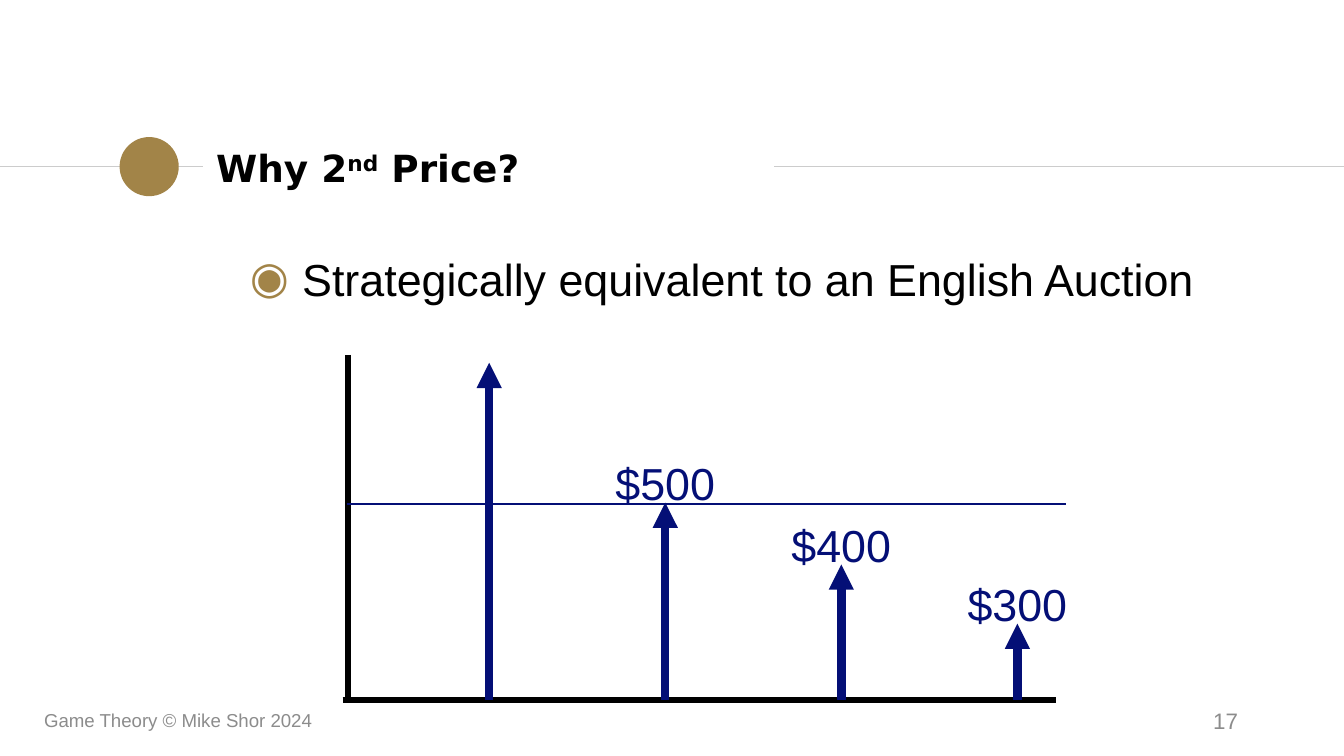
import pptx
import pptx.dml.color
import pptx.enum.shapes
import pptx.enum.text
import pptx.oxml
import pptx.oxml.ns
import pptx.util
from pptx.util import Inches

ALIGN = pptx.enum.text.PP_ALIGN
ANCHOR = pptx.enum.text.MSO_ANCHOR

BLACK = "000000"
NAVY = "040F76"
GOLD = "A28448"
RULE_GRAY = "CCCCCC"
FOOTER_GRAY = "8C8C8C"

BASELINE = 5.21
FIRST_BIDDER_X = 3.64
BIDDER_STEP = 1.31
# Height of each bidder's arrow tip and the value shown above it
BIDDERS = [(2.7, None), (3.74, "$500"), (4.2, "$400"), (4.64, "$300")]


def color(hex_string):
    return pptx.dml.color.RGBColor.from_string(hex_string)


def append_xml(parent, tag, **attributes):
    child = pptx.oxml.parse_xml(f"<a:{tag} {pptx.oxml.ns.nsdecls('a')}/>")
    for key, value in attributes.items():
        child.set(key, value)
    parent.append(child)
    return child


def add_line(slide, start, end, line_color, weight, arrow=False):
    line = slide.shapes.add_connector(
        pptx.enum.shapes.MSO_CONNECTOR.STRAIGHT,
        *(Inches(value) for value in (*start, *end)))
    line.line.color.rgb = color(line_color)
    line.line.width = pptx.util.Pt(weight)
    if arrow:
        append_xml(line.line._get_or_add_ln(), "tailEnd", type="triangle")
    append_xml(line._element.spPr, "effectLst")


def add_dot(slide, left, top, size, fill):
    dot = slide.shapes.add_shape(
        pptx.enum.shapes.MSO_SHAPE.OVAL,
        Inches(left), Inches(top), Inches(size), Inches(size))
    dot.shadow.inherit = False
    dot.fill.solid()
    dot.fill.fore_color.rgb = color(fill)
    dot.line.fill.background()


def add_text_box(slide, box, align=ALIGN.LEFT, anchor=ANCHOR.TOP, inset=None):
    """Add an empty text box and return its first paragraph."""
    frame = slide.shapes.add_textbox(*(Inches(value) for value in box)).text_frame
    frame.word_wrap = True
    frame.vertical_anchor = anchor
    if inset is not None:
        frame.margin_left = frame.margin_right = Inches(inset)
        frame.margin_top = frame.margin_bottom = Inches(inset)
    paragraph = frame.paragraphs[0]
    paragraph.alignment = align
    return paragraph


def add_run(paragraph, text, size, text_color, font="Arial", bold=False):
    run = paragraph.add_run()
    run.text = text
    run.font.name = font
    run.font.size = pptx.util.Pt(size)
    run.font.bold = bold
    run.font.color.rgb = color(text_color)
    return run


def set_bullet(paragraph, character, bullet_color, margin, hanging):
    properties = paragraph._p.get_or_add_pPr()
    properties.set("marL", str(Inches(margin)))
    properties.set("indent", str(-Inches(hanging)))
    append_xml(append_xml(properties, "buClr"), "srgbClr", val=bullet_color)
    append_xml(properties, "buFont", typeface="Arial")
    append_xml(properties, "buChar", char=character)


def add_heading(slide):
    add_line(slide, (0, 1.24), (1.51, 1.24), RULE_GRAY, 0.75)
    add_dot(slide, 0.89, 1.02, 0.44, GOLD)
    add_line(slide, (5.76, 1.24), (10, 1.24), RULE_GRAY, 0.75)
    title = add_text_box(slide, (1.51, 1.01, 4.24, 0.48),
                         anchor=ANCHOR.MIDDLE, inset=0.1)
    for text, raised in [("Why 2", False), ("nd", True), (" Price?", False)]:
        run = add_run(title, text, 20, BLACK, "DejaVu Sans", bold=True)
        if raised:
            run._r.get_or_add_rPr().set("baseline", "30000")


def add_point(slide):
    point = add_text_box(slide, (1.51, 1.77, 7.65, 3.4), inset=0.1)
    set_bullet(point, "◉", GOLD, 0.64, 0.39)
    add_run(point, "Strategically equivalent to an English Auction", 24, BLACK)


def add_bid_diagram(slide):
    add_line(slide, (2.59, 2.64), (2.59, 5.19), BLACK, 3)
    add_line(slide, (2.55, BASELINE), (7.86, BASELINE), BLACK, 3)
    add_line(slide, (2.58, 3.75), (7.93, 3.75), NAVY, 0.75)
    for index, (tip, value) in enumerate(BIDDERS):
        x = FIRST_BIDDER_X + index * BIDDER_STEP
        add_line(slide, (x, BASELINE), (x, tip), NAVY, 4.5, arrow=True)
        if value:
            label = add_text_box(slide, (x - 0.8, tip - 0.4, 1.6, 0.5), ALIGN.CENTER)
            add_run(label, value, 24, NAVY)


def add_footer(slide):
    credit = add_text_box(slide, (0.23, 5.21, 3.38, 0.3), anchor=ANCHOR.MIDDLE)
    add_run(credit, "Game Theory © Mike Shor 2024", 10, FOOTER_GRAY)
    number = add_text_box(slide, (7.06, 5.21, 2.25, 0.3), ALIGN.RIGHT, ANCHOR.MIDDLE)
    add_run(number, "17", 12, FOOTER_GRAY)


def main():
    presentation = pptx.Presentation()
    presentation.slide_width = Inches(10)
    presentation.slide_height = Inches(10) * 9 // 16
    slide = presentation.slides.add_slide(presentation.slide_layouts[6])
    add_heading(slide)
    add_point(slide)
    add_bid_diagram(slide)
    add_footer(slide)
    presentation.save("out.pptx")


if __name__ == "__main__":
    main()
